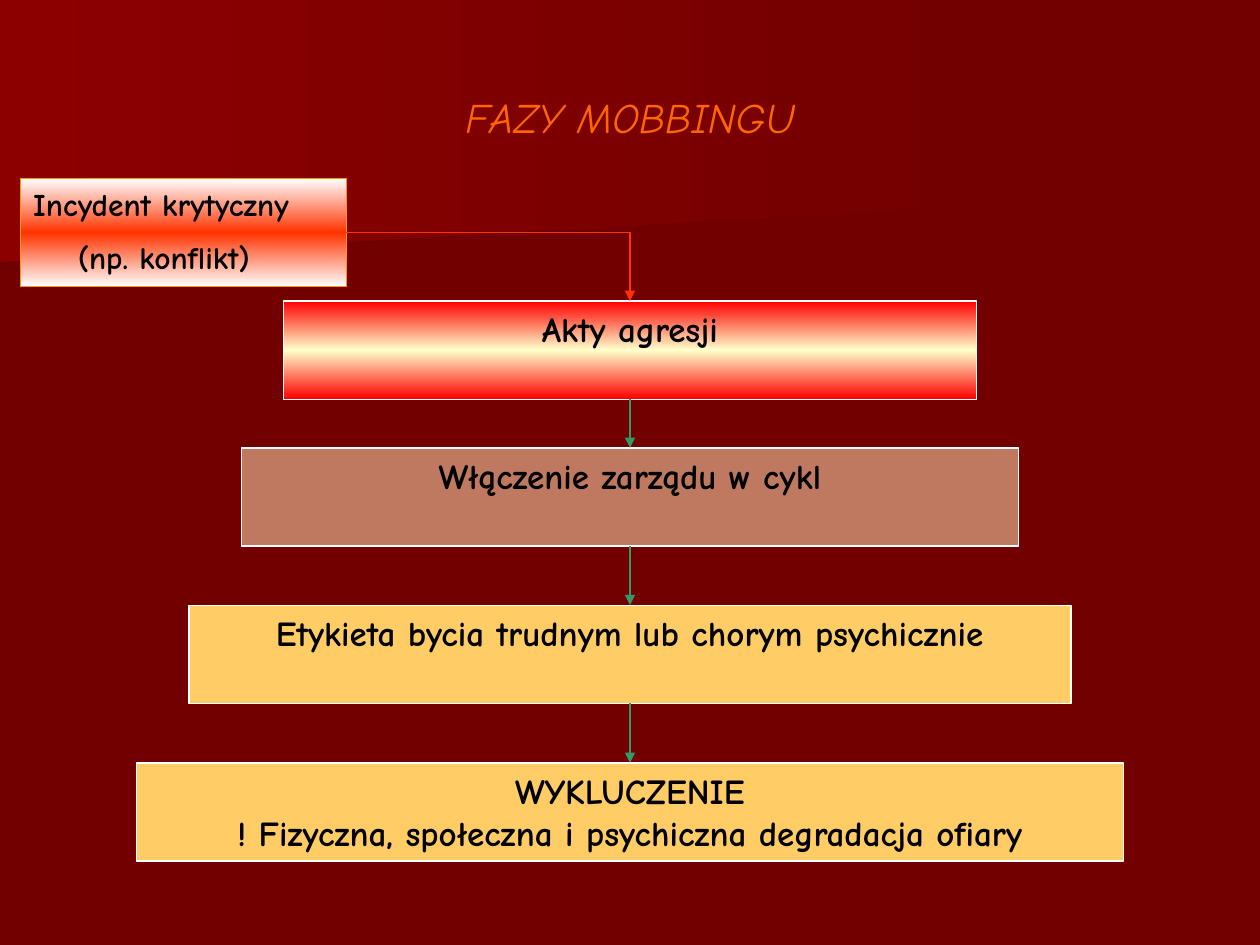
"""Builds a flow slide on the phases of mobbing."""
from copy import deepcopy

from lxml import etree
from pptx import Presentation
from pptx import util as u
from pptx.dml.color import RGBColor
from pptx.enum import shapes, text
from pptx.oxml.ns import qn

FONT = "Comic Neue"
CENTER = u.Cm(12.7)
STEP_HEIGHT = u.Cm(1.98)
STEPS = [
    (6.07, 13.97, ["FF0000", "FFFFCC", "FF0000"], ["Akty agresji"]),
    (9.03, 15.66, ["BE7960"], ["Włączenie zarządu w cykl"]),
    (12.2, 17.78, ["FFCC66"], ["Etykieta bycia trudnym lub chorym psychicznie"]),
    (15.38, 19.9, ["FFCC66"],
     ["WYKLUCZENIE", "! Fizyczna, społeczna i psychiczna degradacja ofiary"]),
]
BACKDROPS = [
    ([(19.76, 3.89), (0, 5.51), (0, 2.57), (19.79, 2.57), (19.76, 3.25)],
     ["6F0000", "720000"]),
    ([(20.12, 4.11), (0, 5.28), (0, 0), (20.12, 0)], ["8C0000", "720000"]),
]


def color(value):
    """Return the colour for a hex string."""
    return RGBColor.from_string(value)


def apply_format(target, values):
    """Set each named attribute of the target."""
    for name, value in values.items():
        setattr(target, name, value)


def paint(shape, colors, angle=0):
    """Fill a shape with one colour or an evenly spaced gradient."""
    if len(colors) == 1:
        shape.fill.solid()
        shape.fill.fore_color.rgb = color(colors[0])
        return
    shape.fill.gradient()
    shape.fill.gradient_angle = angle
    stop_list = shape.element.xpath(".//a:gsLst")[0]
    for _ in colors[2:]:
        stop_list.append(deepcopy(stop_list[0]))
    for index, (stop, value) in enumerate(zip(shape.fill.gradient_stops, colors)):
        stop.position = index / (len(colors) - 1)
        stop.color.rgb = color(value)


def write(frame, lines, font, paragraph_format):
    """Write one formatted paragraph per line and return the paragraphs."""
    frame.text = "\n".join(lines)
    for paragraph in frame.paragraphs:
        apply_format(paragraph, paragraph_format)
        apply_format(paragraph.font, {"name": FONT, **font})
        paragraph.font.color.rgb = color("000000")
    return frame.paragraphs


def add_backdrop(slide, points, colors):
    """Draw a slanted gradient panel behind the content."""
    corners = [(u.Cm(x), u.Cm(y)) for x, y in points]
    builder = slide.shapes.build_freeform(*corners[0])
    builder.add_line_segments(corners[1:], close=True)
    shape = builder.convert_to_shape()
    shape.shadow.inherit = False
    paint(shape, colors)
    shape.line.fill.background()


def add_title(slide, wording):
    """Place the title above the backdrop."""
    title = slide.shapes.title
    title.element.getparent().append(title.element)
    apply_format(title, {"left": u.Cm(1.27), "top": u.Cm(0.76),
                         "width": u.Cm(22.86), "height": u.Cm(3.18)})
    title.text_frame.vertical_anchor = text.MSO_ANCHOR.MIDDLE
    paragraph, = write(title.text_frame, [wording],
                       {"size": u.Pt(24), "italic": True},
                       {"alignment": text.PP_ALIGN.CENTER})
    paragraph.font.color.rgb = color("FF6600")


def add_box(slide, position, colors, border, lines, size, alignment):
    """Add a bordered box with text at its top and return the shape."""
    shape = slide.shapes.add_shape(shapes.MSO_SHAPE.RECTANGLE, *position)
    shape.shadow.inherit = False
    paint(shape, colors, 90)
    shape.line.color.rgb = color(border)
    shape.line.width = u.Pt(0.75)
    apply_format(shape.text_frame, {"word_wrap": True,
                                    "vertical_anchor": text.MSO_ANCHOR.TOP})
    write(shape.text_frame, lines, {"size": u.Pt(size), "bold": True},
          {"alignment": alignment})
    return shape


def add_incident(slide):
    """Add the triggering incident with its indented example."""
    position = [u.Cm(value) for value in (0.42, 3.6, 6.56, 2.18)]
    shape = add_box(slide, position, ["FFFFFF", "FF3300", "FFFFFF"], "FF9900",
                    ["Incydent krytyczny", "(np. konflikt)"], 18,
                    text.PP_ALIGN.LEFT)
    example = shape.text_frame.paragraphs[1]
    example.space_before = u.Pt(9)
    example._p.get_or_add_pPr().set("marL", str(u.Cm(0.9)))
    return shape


def add_step(slide, top, width, colors, lines):
    """Add a centred step of the flow."""
    width = u.Cm(width)
    position = (CENTER - width // 2, u.Cm(top), width, STEP_HEIGHT)
    return add_box(slide, position, colors, "FFFFFF", lines, 20,
                   text.PP_ALIGN.CENTER)


def add_arrow(slide, start, end, value, bent=False):
    """Add a straight or single-bend arrow."""
    kind = shapes.MSO_CONNECTOR.ELBOW if bent else shapes.MSO_CONNECTOR.STRAIGHT
    arrow = slide.shapes.add_connector(kind, *start, *end)
    arrow.line.color.rgb = color(value)
    arrow.line.width = u.Pt(0.75)
    if bent:
        arrow.element.xpath(".//a:prstGeom")[0].set("prst", "bentConnector2")
    outline = arrow.element.xpath(".//a:ln")[0]
    etree.SubElement(outline, qn("a:tailEnd"), type="triangle")
    etree.SubElement(outline.getparent(), qn("a:effectLst"))


def main():
    """Build and save the slide."""
    presentation = Presentation()
    apply_format(presentation, {"slide_width": u.Cm(25.4),
                                "slide_height": u.Cm(19.05)})
    slide = presentation.slides.add_slide(presentation.slide_layouts[5])
    slide.background.fill.solid()
    slide.background.fill.fore_color.rgb = color("720000")
    for backdrop in BACKDROPS:
        add_backdrop(slide, *backdrop)
    add_title(slide, "FAZY MOBBINGU")
    steps = [add_step(slide, *step) for step in STEPS]
    for upper, lower in zip(steps, steps[1:]):
        add_arrow(slide, (CENTER, upper.top + upper.height),
                  (CENTER, lower.top), "339966")
    incident = add_incident(slide)
    add_arrow(slide, (incident.left + incident.width,
                      incident.top + incident.height // 2),
              (CENTER, steps[0].top), "FF3300", bent=True)
    presentation.save("out.pptx")


if __name__ == "__main__":
    main()
